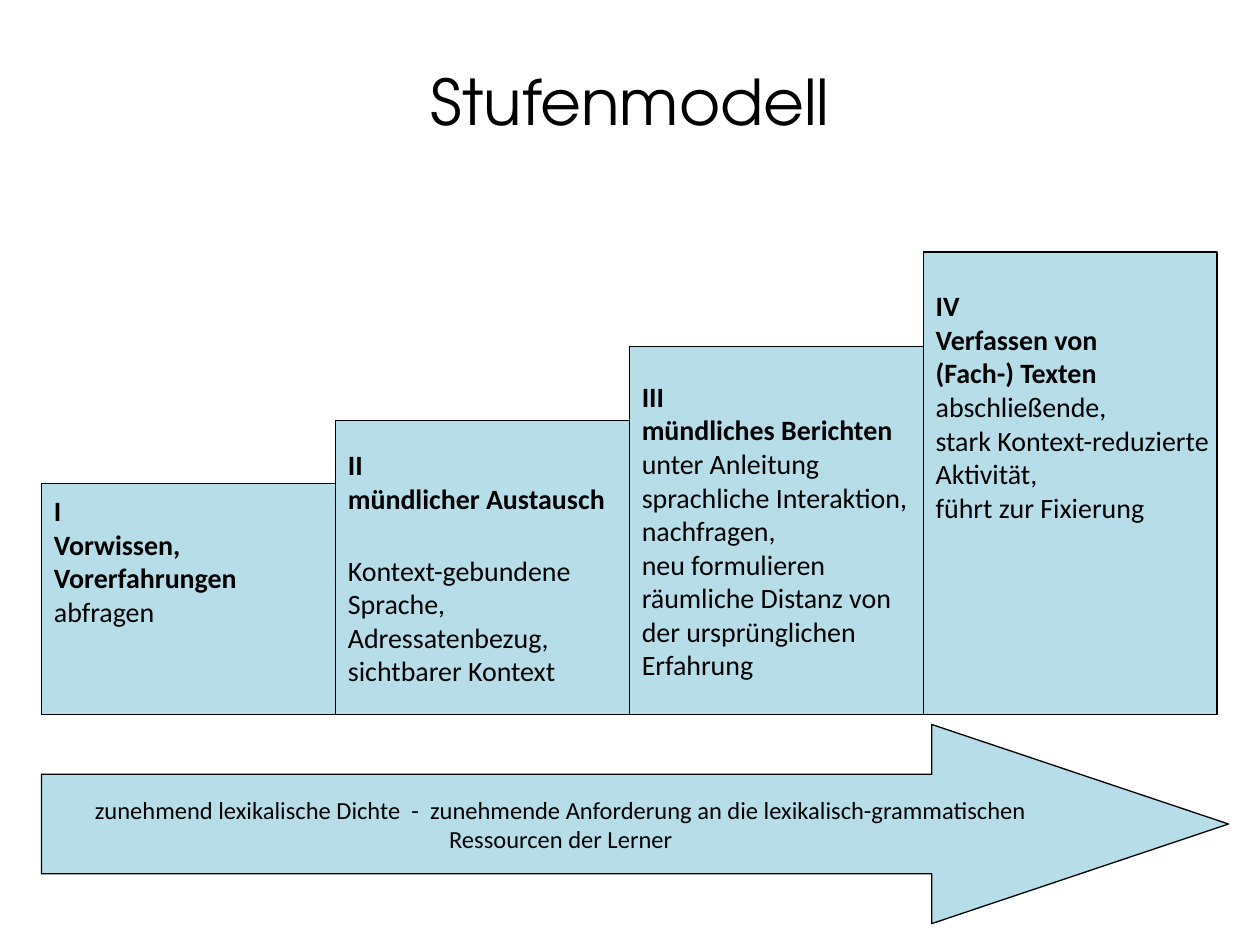
from pptx import Presentation
from pptx.dml.color import RGBColor
from pptx.enum.shapes import MSO_SHAPE as Shape
from pptx.enum.text import MSO_ANCHOR as Anchor, MSO_AUTO_SIZE as AutoSize, PP_ALIGN as Align
from pptx.util import Inches, Pt

BLACK = RGBColor(0x00, 0x00, 0x00)
LIGHT_BLUE = RGBColor(0xB7, 0xDE, 0xE8)

# Each step: height and space kept free below the text in inches,
# then bold heading lines, plain lines and the gap between both in points
STEPS = [
    (1.83, 0.66, ["I", "Vorwissen,", "Vorerfahrungen"], ["abfragen"], 0),
    (2.33, 0.05, ["II", "mündlicher Austausch"],
     ["Kontext-gebundene", "Sprache,", "Adressatenbezug,", "sichtbarer Kontext"], 22),
    (2.92, 0.05, ["III", "mündliches Berichten"],
     ["unter Anleitung", "sprachliche Interaktion,", "nachfragen,", "neu formulieren",
      "räumliche Distanz von", "der ursprünglichen", "Erfahrung"], 0),
    (3.67, 1.27, ["IV", "Verfassen von", "(Fach-) Texten"],
     ["abschließende,", "stark Kontext-reduzierte", "Aktivität,", "führt zur Fixierung"], 0),
]
ARROW_LINES = [
    "zunehmend lexikalische Dichte  -  zunehmende Anforderung an die lexikalisch-grammatischen",
    "Ressourcen der Lerner",
]


def add_line(text_frame, text, size=16, font="Calibri", bold=False, align=Align.LEFT, gap=0):
    """Write one paragraph, using the empty first one if it is still free."""
    paragraph = text_frame.paragraphs[0]
    if paragraph.runs:
        paragraph = text_frame.add_paragraph()
    paragraph.alignment = align
    paragraph.space_before = Pt(gap)
    run = paragraph.add_run()
    run.text = text
    run.font.size = Pt(size)
    run.font.name = font
    run.font.bold = bold
    run.font.color.rgb = BLACK


def add_box(slide, kind, left, top, width, height):
    """Add a light blue shape with a thin black outline."""
    shape = slide.shapes.add_shape(kind, left, top, width, height)
    shape.shadow.inherit = False
    shape.fill.solid()
    shape.fill.fore_color.rgb = LIGHT_BLUE
    shape.line.color.rgb = BLACK
    shape.line.width = Pt(0.75)
    shape.text_frame.word_wrap = False
    shape.text_frame.vertical_anchor = Anchor.MIDDLE
    return shape


def add_title(slide, left, top, width, height):
    title = slide.shapes.title
    title.left, title.top, title.width, title.height = left, top, width, height
    title.text_frame.auto_size = AutoSize.NONE
    title.text_frame.vertical_anchor = Anchor.MIDDLE
    add_line(title.text_frame, "Stufenmodell", size=36, font="TeX Gyre Adventor",
             align=Align.CENTER)


def add_staircase(slide, left, top, width, height):
    """Stand the steps side by side on the bottom edge of the box."""
    step_width = width // len(STEPS)
    for index, (step_height, free_below, heading, details, gap) in enumerate(STEPS):
        step_top = top + height - Inches(step_height)
        step = add_box(slide, Shape.RECTANGLE, left + index * step_width, step_top,
                       step_width, Inches(step_height))
        step.text_frame.margin_bottom = Inches(free_below)
        for text in heading:
            add_line(step.text_frame, text, bold=True)
        for number, text in enumerate(details):
            add_line(step.text_frame, text, gap=0 if number else gap)


def add_arrow(slide, left, top, width, height):
    arrow = add_box(slide, Shape.RIGHT_ARROW, left, top, width, height)
    arrow.adjustments[0] = 0.5
    arrow.adjustments[1] = 1.49
    for text in ARROW_LINES:
        add_line(arrow.text_frame, text, size=14, align=Align.CENTER)


def main():
    presentation = Presentation()
    presentation.slide_width = Inches(10)
    presentation.slide_height = Inches(7.5)
    slide = presentation.slides.add_slide(presentation.slide_layouts[5])  # title only

    add_title(slide, Inches(0.75), Inches(0.42), Inches(8.5), Inches(0.75))
    add_staircase(slide, Inches(0.33), Inches(2), Inches(9.33), Inches(3.67))
    add_arrow(slide, Inches(0.33), Inches(5.75), Inches(9.42), Inches(1.58))

    presentation.save("out.pptx")


if __name__ == "__main__":
    main()
